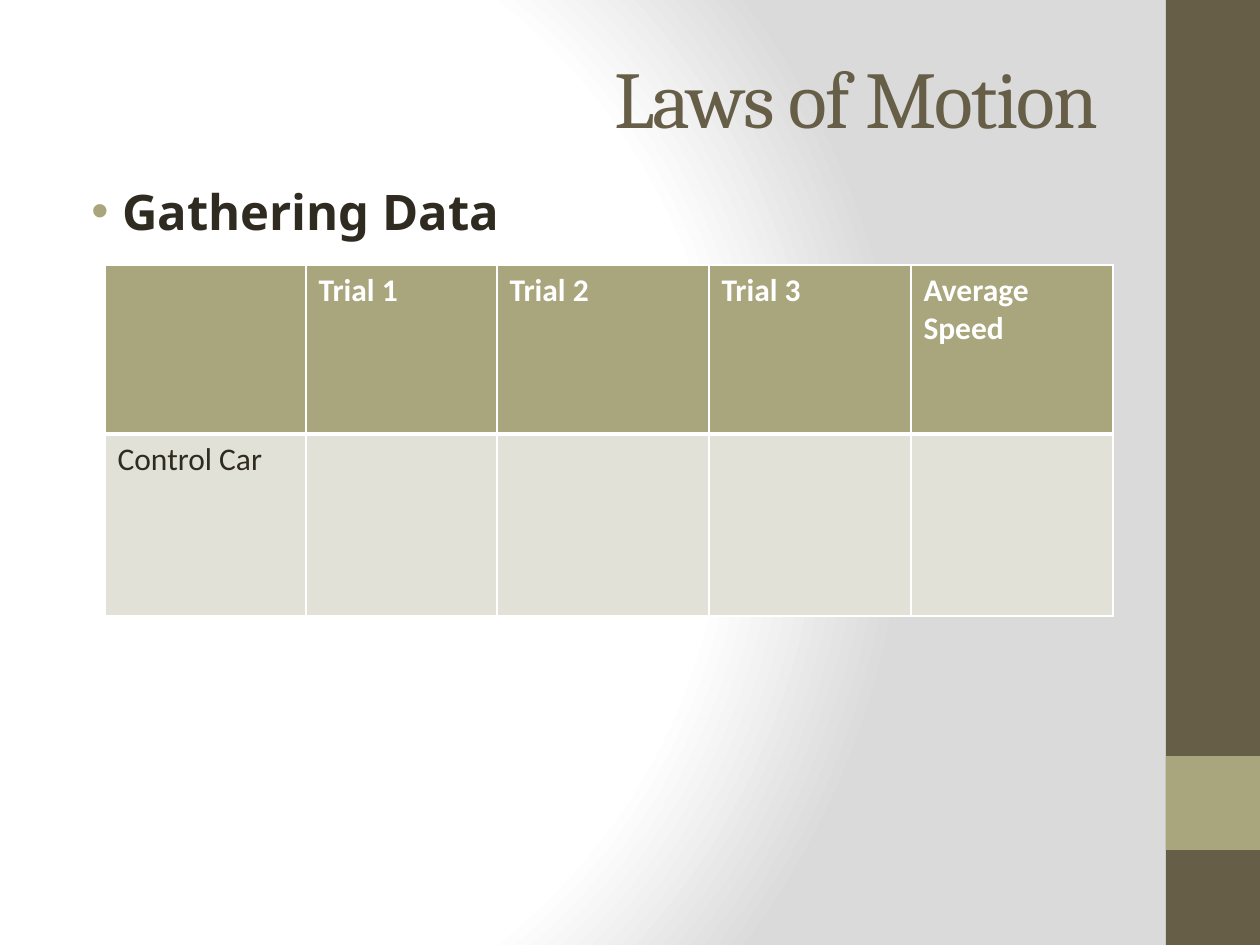
from typing import NamedTuple

from lxml.etree import SubElement
from pptx import Presentation
from pptx.dml.color import RGBColor
from pptx.enum.shapes import MSO_SHAPE
from pptx.enum.text import MSO_ANCHOR, PP_ALIGN
from pptx.oxml.ns import qn
from pptx.util import Emu, Pt

OLIVE, SAGE, PALE, INK, WHITE = "675E47", "A9A57C", "E2E1D7", "2F2B20", "FFFFFF"
COLUMNS = [201, 191, 212, 202, 202]
ROWS = [169, 182]
CONTENT = [
    ["", "Trial 1", "Trial 2", "Trial 3", "Average Speed"],
    ["Control Car", "", "", "", ""],
]


class Box(NamedTuple):
    left: int
    top: int
    width: int
    height: int


class Band(NamedTuple):
    box: Box
    color: str


class RowStyle(NamedTuple):
    fill: str
    ink: str
    bold: bool
    top: int
    bottom: int


BANDS = [Band(Box(1166, 0, 94, 945), OLIVE), Band(Box(1166, 756, 94, 94), SAGE)]
ROW_STYLES = [RowStyle(SAGE, WHITE, True, 1, 3), RowStyle(PALE, INK, False, 3, 1)]


def px(length: int) -> Emu:
    """Turn pixels into EMU."""
    return Emu(round(length * 914400 / 126))


def place(box: Box) -> list[Emu]:
    """Return the four lengths of a box in EMU."""
    return [px(length) for length in box]


def rgb(color: str) -> RGBColor:
    """Turn a hex string into a colour."""
    return RGBColor.from_string(color)


def add_xml(parent, tag: str, **attributes):
    """Append a DrawingML element."""
    return SubElement(parent, qn(f"a:{tag}"), attributes)


def add_solid(parent, color: str) -> None:
    """Append a solid fill."""
    add_xml(add_xml(parent, "solidFill"), "srgbClr", val=color)


def style_run(run, font: str, size: int, color: str, bold: bool = False) -> None:
    """Format one run."""
    run.font.name = font
    run.font.size = Pt(size)
    run.font.bold = bold
    run.font.color.rgb = rgb(color)


def paint_background(slide) -> None:
    """Fill the background with a circular gradient."""
    slide.background.fill.gradient()
    gradient = slide.element.find(f".//{qn('a:gradFill')}")
    for child in list(gradient):
        gradient.remove(child)
    stops = add_xml(gradient, "gsLst")
    for position, color in ((0, WHITE), (75, WHITE), (100, "DADADA")):
        stop = add_xml(stops, "gs", pos=str(position * 1000))
        add_xml(stop, "srgbClr", val=color)
    circle = add_xml(gradient, "path", path="circle")
    add_xml(circle, "fillToRect", l="20000", t="50000", r="100000", b="50000")


def add_band(slide, band: Band) -> None:
    """Draw one part of the side bar."""
    bar = slide.shapes.add_shape(MSO_SHAPE.RECTANGLE, *place(band.box))
    bar.shadow.inherit = False
    bar.fill.solid()
    bar.fill.fore_color.rgb = rgb(band.color)
    bar.line.fill.background()


def set_title(slide, wording: str, box: Box) -> None:
    """Move and format the title."""
    title = slide.shapes.title
    title.left, title.top, title.width, title.height = place(box)
    frame = title.text_frame
    frame.text = wording
    frame.vertical_anchor = MSO_ANCHOR.MIDDLE
    heading = frame.paragraphs[0]
    heading.alignment = PP_ALIGN.RIGHT
    style_run(heading.runs[0], "Cambria", 46, OLIVE)
    heading.runs[0].font._element.set("spc", "-100")


def add_bullet(slide, wording: str, box: Box) -> None:
    """Write the bulleted subject line."""
    frame = slide.shapes.add_textbox(*place(box)).text_frame
    frame.word_wrap = True
    frame.text = wording
    subject = frame.paragraphs[0]
    style_run(subject.runs[0], "Noto Sans", 28, INK, True)
    properties = subject._p.get_or_add_pPr()
    properties.set("marL", str(px(47)))
    properties.set("indent", str(px(-31)))
    add_xml(add_xml(properties, "spcBef"), "spcPct", val="20000")
    add_xml(add_xml(properties, "buClr"), "srgbClr", val=SAGE)
    add_xml(properties, "buFont", typeface="Arial")
    add_xml(properties, "buChar", char="•")


def fill_cell(cell, wording: str, style: RowStyle) -> None:
    """Write and format one table cell."""
    properties = cell._tc.get_or_add_tcPr()
    borders = {"lnL": 1, "lnR": 1, "lnT": style.top, "lnB": style.bottom}
    for side, width in borders.items():
        add_solid(add_xml(properties, side, w=str(Pt(width))), WHITE)
    cell.fill.solid()
    cell.fill.fore_color.rgb = rgb(style.fill)
    cell.text = wording
    for run in cell.text_frame.paragraphs[0].runs:
        style_run(run, "Calibri", 18, style.ink, style.bold)


def add_trials(slide, left: int, top: int) -> None:
    """Build the table of trials."""
    box = Box(left, top, sum(COLUMNS), sum(ROWS))
    trials = slide.shapes.add_table(len(ROWS), len(COLUMNS), *place(box)).table
    for column, width in zip(trials.columns, COLUMNS):
        column.width = px(width)
    for row, height, words, style in zip(trials.rows, ROWS, CONTENT, ROW_STYLES):
        row.height = px(height)
        for cell, wording in zip(row.cells, words):
            fill_cell(cell, wording, style)


def main() -> None:
    """Build and save the slide."""
    deck = Presentation()
    deck.slide_width, deck.slide_height = px(1260), px(945)
    slide = deck.slides.add_slide(deck.slide_layouts[5])
    paint_background(slide)
    for band in BANDS:
        add_band(slide, band)
    set_title(slide, "Laws of Motion", Box(144, 18, 967, 157))
    add_bullet(slide, "Gathering Data", Box(63, 175, 1134, 77))
    add_trials(slide, 105, 265)
    deck.save("out.pptx")


if __name__ == "__main__":
    main()
